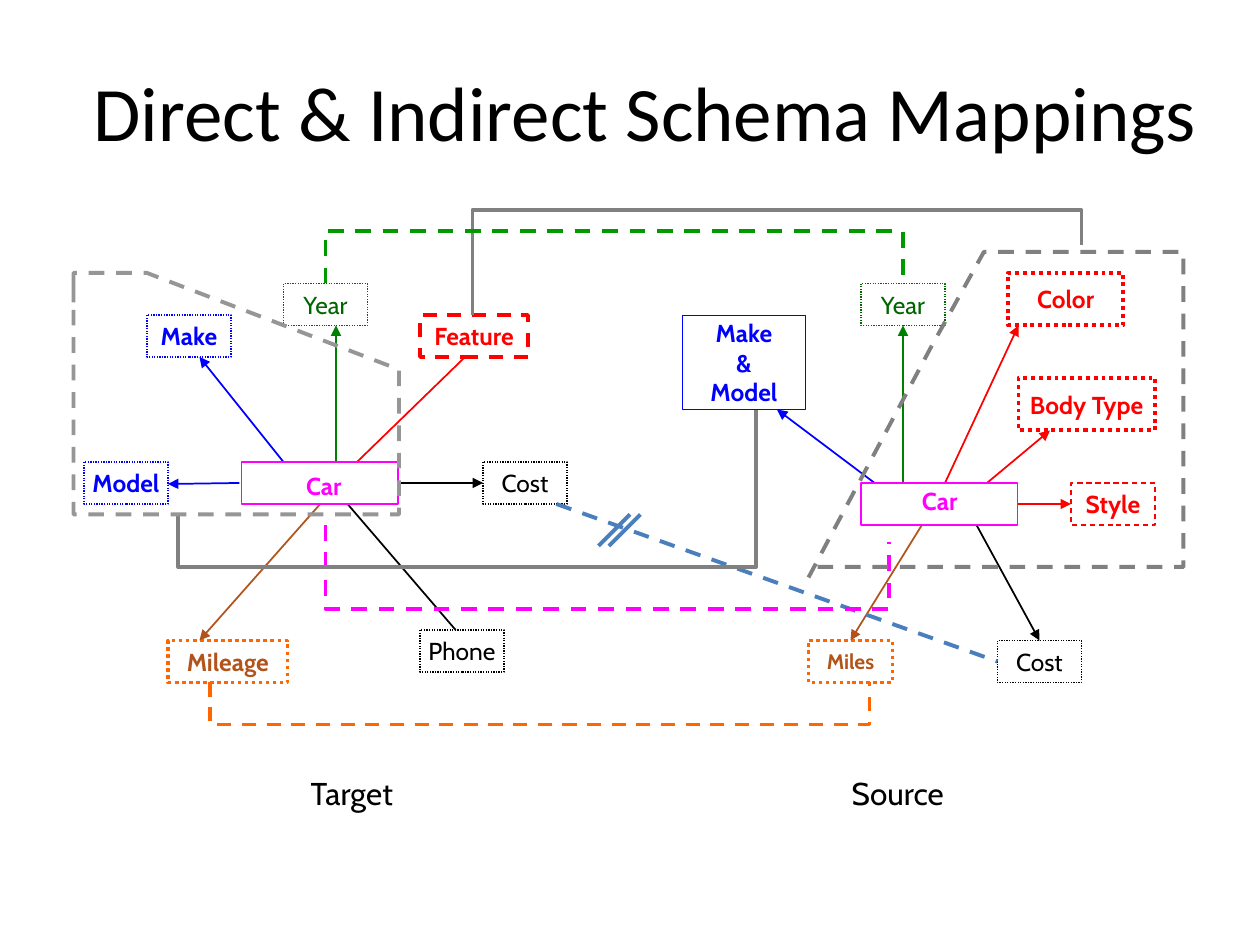
from lxml.etree import SubElement
from pptx import Presentation
from pptx.dml.color import RGBColor
from pptx.enum.dml import MSO_LINE
from pptx.enum.shapes import MSO_CONNECTOR, MSO_SHAPE
from pptx.enum.text import MSO_ANCHOR, PP_ALIGN
from pptx.oxml.ns import qn
from pptx.util import Inches, Pt

# All places are in grid units: twelve to the inch, 120 by 90 on the slide.
UNIT = Inches(1) / 12
DASH, DOT = MSO_LINE.DASH, MSO_LINE.ROUND_DOT
BLACK, WHITE, RED, BLUE = "000000", "FFFFFF", "FF0000", "0000FF"
PINK, BROWN, ORANGE = "FF00FF", "B2541A", "FF6600"
LEAF, GREEN, MINT = "006600", "008000", "009900"
GREY, SILVER, STEEL = "808080", "969696", "4B7EBC"

# text, (left, top, width, height), size, colour, bold, font
LABELS = [
    ("Direct & Indirect Schema Mappings", (5, 3, 113, 15), 44, BLACK, False, "Calibri"),
    ("Target", (14, 73, 39, 5), 18, BLACK, False, "Cabin"),
    ("Source", (66, 73, 39, 5), 18, BLACK, False, "Cabin"),
    ("Car", (24.5, 43.8, 12.7, 5), 14, PINK, True, "Cabin"),
    ("Car", (82, 45.7, 15, 4), 14, PINK, True, "Cabin"),
]

# text, (left, top, width, height), line colour, line width, dash, text colour, size, bold
SMALL = (8, 4)
BOXES = [
    ("Year", (27, 27, *SMALL), LEAF, 0.75, DOT, LEAF, 14, False),
    ("Make", (14, 30, *SMALL), BLUE, 0.75, DOT, BLUE, 14, True),
    ("Model", (8, 44, *SMALL), BLUE, 0.75, DOT, BLUE, 14, True),
    ("Feature", (40, 30, 10.3, 4), RED, 2, DASH, RED, 14, True),
    ("Cost", (46, 44, *SMALL), BLACK, 0.75, DOT, BLACK, 14, False),
    ("Phone", (40, 60, *SMALL), BLACK, 0.75, DOT, BLACK, 14, False),
    ("Mileage", (16, 61, 11.4, 4), ORANGE, 2, DOT, BROWN, 14, True),
    ("Make\n&\nModel", (65, 30, 11.7, 9), BLUE, 0.25, None, BLUE, 14, True),
    ("Year", (82, 27, *SMALL), LEAF, 0.75, DOT, LEAF, 14, False),
    ("Color", (96, 26, 11, 5), RED, 2.25, DOT, RED, 14, True),
    ("Body Type", (97, 36, 13, 5), RED, 2.25, DOT, RED, 14, True),
    ("Style", (102, 46, *SMALL), RED, 0.75, DASH, RED, 14, True),
    ("Miles", (77, 61, *SMALL), ORANGE, 2, DOT, BROWN, 12, True),
    ("Cost", (95, 61, *SMALL), BLACK, 0.75, DOT, BLACK, 14, False),
]

# from, to, colour, width, dash, arrowhead
LINKS = [
    ((32, 44), (32, 31), GREEN, 1, None, True),
    ((27, 44), (19, 34), BLUE, 1, None, True),
    ((22.8, 46), (16, 46.1), BLUE, 1, None, True),
    ((34, 44), (44.3, 34), RED, 1, None, False),
    ((38, 46), (46, 46), BLACK, 1, None, True),
    ((30.5, 48), (19, 61), BROWN, 1, None, True),
    ((33.1, 48), (43.4, 60), BLACK, 1, None, False),
    ((86, 46), (86, 31), GREEN, 1, None, True),
    ((83.3, 46), (74, 39), BLUE, 1, None, True),
    ((90, 46), (97, 31), RED, 1, None, True),
    ((94, 46), (100, 41), RED, 1, None, True),
    ((97, 48), (102, 48), RED, 0.75, None, True),
    ((87.8, 50), (81, 61), BROWN, 1, None, True),
    ((93, 50), (99, 61), BLACK, 1, None, True),
    ((53, 48), (95, 63), STEEL, 2.25, DASH, False),
    ((61, 49), (58, 52), STEEL, 2.25, None, False),
    ((57, 52), (60, 49), STEEL, 2.25, None, False),
]

# points, colour, width, dash
PATHS = [
    ([(23, 45), (23, 48), (37.9, 48), (37.9, 44), (23, 44), (23, 46)], PINK, 0.75, None),
    ([(82, 47), (82, 50), (96.9, 50), (96.9, 46), (82, 46), (82, 48)], PINK, 0.75, None),
    ([(31, 50), (31, 58), (84.7, 58), (84.7, 51.6)], PINK, 2.25, DASH),
    ([(20, 65), (20, 69), (82.8, 69), (82.8, 65)], ORANGE, 2, DASH),
    ([(45, 30), (45, 20), (103, 20), (103, 23.3)], GREY, 2.25, None),
    ([(77, 55), (88.6, 33.2), (93.7, 24), (112.7, 24), (112.7, 54), (77, 54)],
     GREY, 2.25, DASH),
    ([(17, 49), (17, 54), (72, 54), (72, 39)], GREY, 2.25, None),
    ([(7, 26.9), (7, 49), (38, 49), (38, 35.2), (14, 26), (7, 26), (7, 28.8)],
     SILVER, 2.25, DASH),
    ([(31, 27), (31, 22), (86, 22), (86, 27)], MINT, 2.25, DASH),
]


def grid(units):
    return [round(u * UNIT) for u in units]


def rgb(text):
    return RGBColor.from_string(text)


def stroke(line, color, width, dash):
    line.color.rgb = rgb(color)
    line.width = Pt(width)
    if dash:
        line.dash_style = dash


def write(shape, text, size, color, bold, font="Cabin"):
    frame = shape.text_frame
    frame.text = text
    frame.word_wrap = False
    frame.vertical_anchor = MSO_ANCHOR.MIDDLE
    for para in frame.paragraphs:
        para.alignment = PP_ALIGN.CENTER
        for run in para.runs:
            run.font.name = font
            run.font.size = Pt(size)
            run.font.bold = bold
            run.font.color.rgb = rgb(color)


def box(shapes, text, place, edge, width, dash, color, size, bold):
    shape = shapes.add_shape(MSO_SHAPE.RECTANGLE, *grid(place))
    shape.shadow.inherit = False
    if edge in (RED, BLUE):
        shape.fill.background()
    else:
        shape.fill.solid()
        shape.fill.fore_color.rgb = rgb(WHITE)
    stroke(shape.line, edge, width, dash)
    write(shape, text, size, color, bold)


def link(shapes, start, end, color, width, dash, arrow):
    line = shapes.add_connector(MSO_CONNECTOR.STRAIGHT, *grid(start + end))
    stroke(line.line, color, width, dash)
    props = line._element.spPr
    if arrow:
        SubElement(props.find(qn("a:ln")), qn("a:tailEnd"), type="triangle")
    SubElement(props, qn("a:effectLst"))


def trace(shapes, points, color, width, dash):
    """Draw an open, unfilled outline through the points."""
    first, *rest = [grid(point) for point in points]
    pen = shapes.build_freeform(*first)
    pen.add_line_segments(rest, close=False)
    shape = pen.convert_to_shape()
    shape.shadow.inherit = False
    shape.fill.background()
    stroke(shape.line, color, width, dash)


def main():
    deck = Presentation()
    deck.slide_width, deck.slide_height = Inches(10), Inches(7.5)
    shapes = deck.slides.add_slide(deck.slide_layouts[6]).shapes
    for text, place, *style in LABELS:
        write(shapes.add_textbox(*grid(place)), text, *style)
    for draw, rows in ((box, BOXES), (link, LINKS), (trace, PATHS)):
        for row in rows:
            draw(shapes, *row)
    deck.save("out.pptx")


if __name__ == "__main__":
    main()
